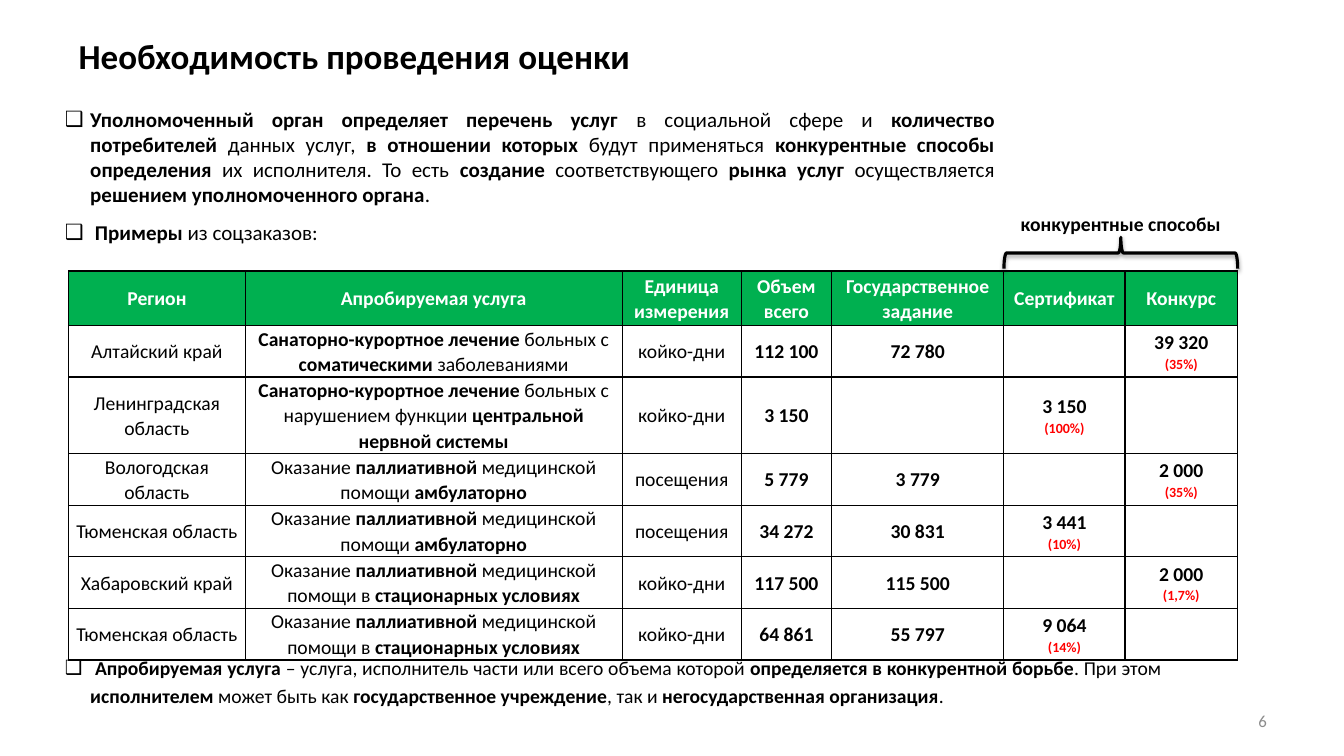
from dataclasses import dataclass

from lxml import etree
from pptx import Presentation
from pptx.dml.color import RGBColor
from pptx.enum.shapes import MSO_SHAPE as Shape
from pptx.enum.text import MSO_ANCHOR as Anchor, MSO_AUTO_SIZE as AutoSize, PP_ALIGN as Align
from pptx.oxml import parse_xml
from pptx.oxml.ns import nsdecls, qn
from pptx.util import Cm, Pt

# Content: words between asterisks are bold
TITLE = "Необходимость проведения оценки"
POINTS = [
    "*Уполномоченный орган определяет перечень услуг *в социальной сфере и "
    "*количество потребителей *данных услуг, *в отношении которых *будут применяться "
    "*конкурентные способы определения *их исполнителя. То есть *создание "
    "*соответствующего *рынка услуг *осуществляется *решением уполномоченного органа*.",
    " *Примеры* из соцзаказов:",
]
NOTE = [
    " *Апробируемая услуга *– услуга, исполнитель части или всего объема которой "
    "*определяется в конкурентной борьбе*. При этом *исполнителем* может быть как "
    "*государственное учреждение*, так и *негосударственная организация*.",
]
BRACE_LABEL = "конкурентные способы"
PAGE_NUMBER = "6"

OUTPATIENT = "Оказание *паллиативной* медицинской помощи *амбулаторно*"
INPATIENT = "Оказание *паллиативной* медицинской помощи в *стационарных условиях*"
HEADER = ["Регион", "Апробируемая услуга", "Единица\nизмерения", "Объем всего",
          "Государственное задание", "Сертификат", "Конкурс"]
ROWS = [
    ["Алтайский край",
     "*Санаторно-курортное лечение *больных с *соматическими* заболеваниями",
     "койко-дни", "*112 100*", "*72 780*", "", "*39 320*\n*(35%)*"],
    ["Ленинградская область",
     "*Санаторно-курортное лечение *больных с нарушением функции "
     "*центральной нервной системы*",
     "койко-дни", "*3 150*", "", "*3 150*\n*(100%)*", ""],
    ["Вологодская область", OUTPATIENT,
     "посещения", "*5 779*", "*3 779*", "", "*2 000*\n*(35%)*"],
    ["Тюменская область", OUTPATIENT,
     "посещения", "*34 272*", "*30 831*", "*3 441*\n*(10%)*", ""],
    ["Хабаровский край", INPATIENT,
     "койко-дни", "*117 500*", "*115 500*", "", "*2 000*\n*(1,7%)*"],
    ["Тюменская область", INPATIENT,
     "койко-дни", "*64 861*", "*55 797*", "*9 064*\n*(14%)*", ""],
]

# Layout, in centimetres
COLUMNS = [4.45, 9.5, 3.0, 2.28, 4.34, 3.05, 2.84]
HEIGHTS = [1.37, 1.3, 1.93] + [1.3] * 4
TABLE_LEFT, TABLE_TOP = 1.73, 6.83
BRACE_DEPTH = 0.79
BRACE_BOTTOM = 6.77


@dataclass(frozen=True)
class Theme:
    font: str = "Calibri"
    ink: str = "000000"
    paper: str = "FFFFFF"
    header: str = "00B050"
    share: str = "FF0000"
    muted: str = "8C8C8C"
    title_size: int = 25
    point_size: int = 15
    text_size: int = 14
    number_size: int = 12
    share_size: int = 10


THEME = Theme()


def write_text(frame, lines, size=THEME.text_size, color=THEME.ink, bold=False,
               align=Align.LEFT, spacing=1.0, before=0, after=0, bullet=None):
    """Fill a frame with paragraphs; share lines such as (35%) are small and red."""
    frame.word_wrap = True
    for index, line in enumerate(lines):
        para = frame.paragraphs[0] if index == 0 else frame.add_paragraph()
        if bullet:
            props = para._p.get_or_add_pPr()
            props.set("marL", str(Cm(0.7)))
            props.set("indent", str(Cm(-0.64)))
            etree.SubElement(props, qn("a:buChar")).set("char", bullet)
        para.alignment = align
        para.line_spacing = spacing
        para.space_before = Pt(before if index else 0)
        para.space_after = Pt(after)
        is_share = line.startswith("*(")
        for part, words in enumerate(line.split("*")):
            if words:
                span = para.add_run()
                span.text = words
                span.font.name = THEME.font
                span.font.size = Pt(THEME.share_size if is_share else size)
                span.font.bold = bold or part % 2 == 1
                span.font.color.rgb = RGBColor.from_string(THEME.share if is_share else color)


def place(box, left, top, width, height, anchor=Anchor.TOP):
    box.left, box.top, box.width, box.height = Cm(left), Cm(top), Cm(width), Cm(height)
    box.text_frame.auto_size = AutoSize.NONE
    box.text_frame.vertical_anchor = anchor
    return box.text_frame


def format_cell(cell, fill):
    cell.margin_left = cell.margin_right = Cm(0.18)
    cell.margin_top = cell.margin_bottom = 0
    cell.vertical_anchor = Anchor.MIDDLE
    props = cell._tc.get_or_add_tcPr()
    for side in ("lnL", "lnR", "lnT", "lnB"):
        props.append(parse_xml(
            f'<a:{side} {nsdecls("a")} w="{Pt(1)}"><a:solidFill>'
            f'<a:srgbClr val="{THEME.ink}"/></a:solidFill></a:{side}>'))
    cell.fill.solid()
    cell.fill.fore_color.rgb = RGBColor.from_string(fill)


def add_table(page):
    table = page.shapes.add_table(len(ROWS) + 1, len(COLUMNS), Cm(TABLE_LEFT), Cm(TABLE_TOP),
                                  Cm(sum(COLUMNS)), Cm(sum(HEIGHTS))).table
    table.horz_banding = False
    for column, width in zip(table.columns, COLUMNS):
        column.width = Cm(width)
    for index, values in enumerate([HEADER] + ROWS):
        table.rows[index].height = Cm(HEIGHTS[index])
        is_header = index == 0
        for cell, value in zip(table.rows[index].cells, values):
            format_cell(cell, THEME.header if is_header else THEME.paper)
            write_text(cell.text_frame, value.split("\n"), align=Align.CENTER, spacing=1.07,
                       bold=is_header, color=THEME.paper if is_header else THEME.ink)


def add_brace(page):
    """Brace over the last two columns: a left brace turned a quarter clockwise."""
    span_width = sum(COLUMNS[-2:])
    center_x = TABLE_LEFT + sum(COLUMNS) - span_width / 2
    center_y = BRACE_BOTTOM - BRACE_DEPTH / 2
    brace = page.shapes.add_shape(
        Shape.LEFT_BRACE, Cm(center_x - BRACE_DEPTH / 2), Cm(center_y - span_width / 2),
        Cm(BRACE_DEPTH), Cm(span_width))
    brace.rotation = 90
    brace.fill.background()
    brace.line.color.rgb = RGBColor.from_string(THEME.ink)
    brace.line.width = Pt(2.25)
    brace.shadow.inherit = False
    brace._element.spPr.find(qn("a:effectLst")).append(parse_xml(
        f'<a:outerShdw {nsdecls("a")} blurRad="{Pt(3.1)}" dist="{Pt(1.8)}" dir="5400000" '
        f'rotWithShape="0"><a:srgbClr val="{THEME.ink}"><a:alpha val="35000"/></a:srgbClr>'
        '</a:outerShdw>'))
    label = page.shapes.add_textbox(0, 0, 0, 0)
    frame = place(label, center_x - span_width / 2, 5.23, span_width, 0.79, Anchor.MIDDLE)
    write_text(frame, [BRACE_LABEL], bold=True, align=Align.CENTER)


def main():
    deck = Presentation()
    deck.slide_width, deck.slide_height = Cm(33.87), Cm(19.05)
    page = deck.slides.add_slide(deck.slide_layouts[3])
    title, points, note = page.placeholders

    # Title and lists
    write_text(place(title, 1.73, 0.91, 23, 1, Anchor.MIDDLE), [TITLE],
               size=THEME.title_size, bold=True)
    write_text(place(points, 1.32, 2.55, 24, 3.99), POINTS, size=THEME.point_size,
               align=Align.JUSTIFY, before=3, after=6, bullet="❑")
    write_text(place(note, 1.32, 16.28, 28.2, 1.6), NOTE,
               align=Align.JUSTIFY, spacing=1.2, bullet="❑")

    # Table with its brace
    add_table(page)
    add_brace(page)

    # Page number
    number = page.shapes.add_textbox(0, 0, 0, 0)
    write_text(place(number, 24.28, 17.65, 7.9, 1.02, Anchor.MIDDLE), [PAGE_NUMBER],
               size=THEME.number_size, color=THEME.muted, align=Align.RIGHT)

    deck.save("out.pptx")


if __name__ == "__main__":
    main()
